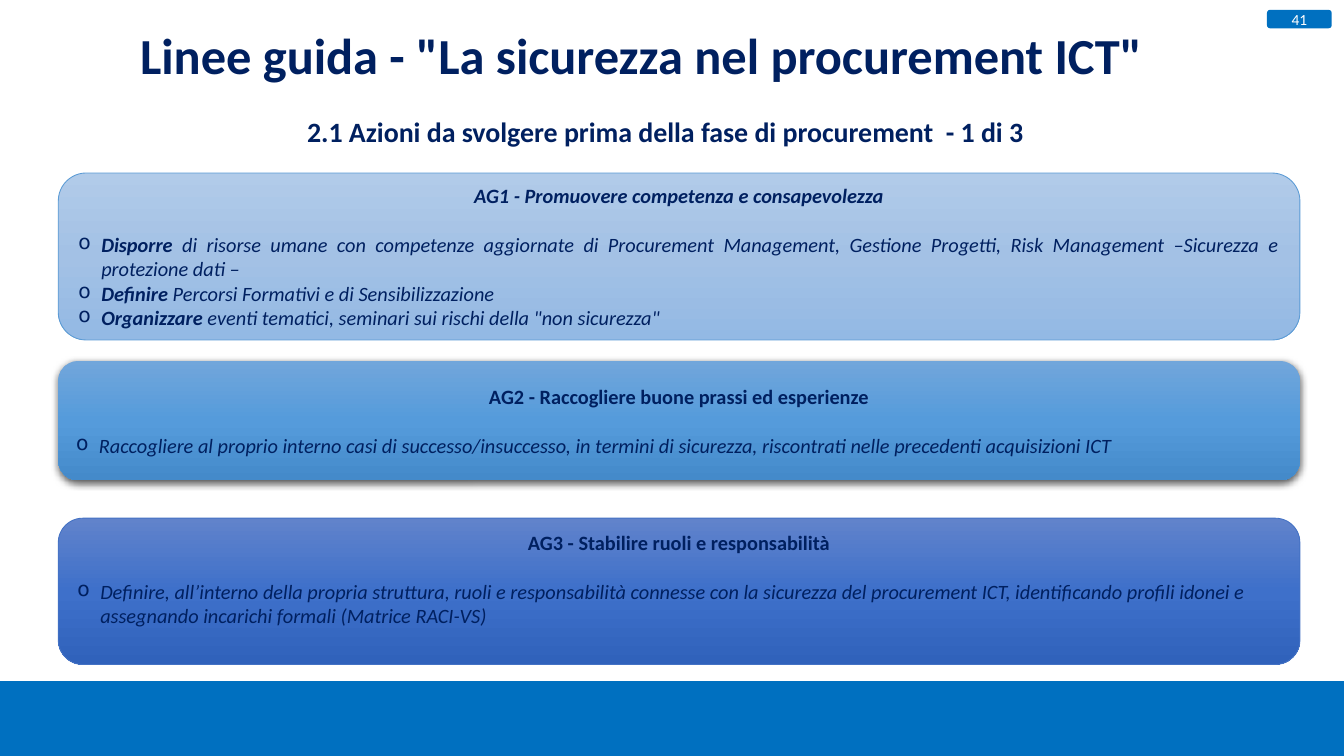
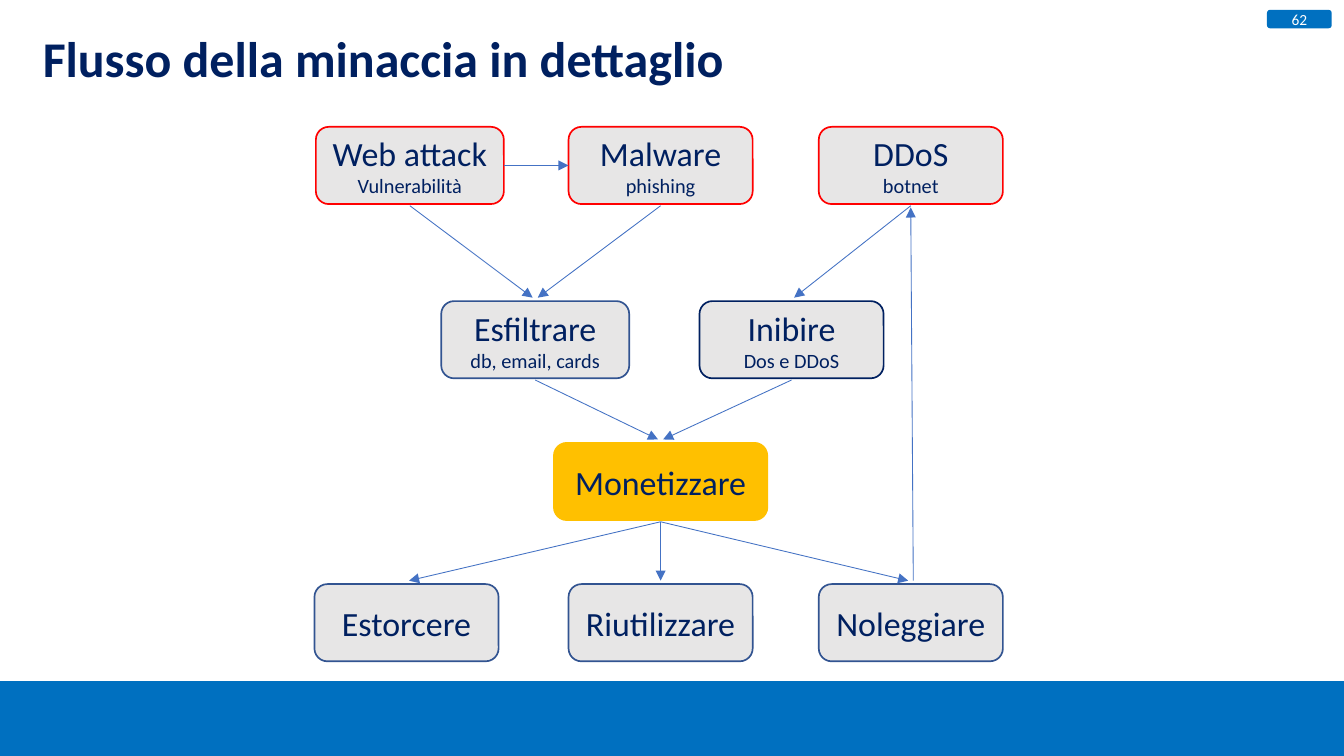
from dataclasses import dataclass
from typing import NamedTuple

from lxml.etree import SubElement
from pptx import Presentation
from pptx.dml.color import RGBColor
from pptx.enum.shapes import MSO_CONNECTOR, MSO_SHAPE
from pptx.enum.text import MSO_ANCHOR, PP_ALIGN
from pptx.oxml.ns import qn
from pptx.util import Pt

SLIDE_W, SLIDE_H = 793.44, 446.4
FONT = "Calibri"
NAVY, BLUE, WHITE = "002060", "0070C0", "FFFFFF"
GREY, RED, STEEL, GOLD, ARROW = "E7E6E6", "FF0000", "325491", "FFC000", "4472C4"
TITLE_Y, TITLE_W, TITLE_H = 9.4, 701.3, 49.7
CARD_X, CARD_W = 34.4, 733
BULLET_INDENT = 13.5
BLANK_LINE = 14.6
NODE_H = 45.6
ARROW_GAP, ARROW_SPREAD = 2, 1.5


class Item(NamedTuple):
    lead: str
    rest: str


@dataclass
class Card:
    top: float
    height: float
    heading: str
    items: list[Item]
    stops: tuple[str, str, str]
    line: str | None = None
    shadow: bool = False
    italic_heading: bool = False
    align: PP_ALIGN = PP_ALIGN.LEFT
    bottom_inset: float = 3.6


@dataclass
class Node:
    name: str
    cx: float
    top: float
    line: str = STEEL
    detail: str = ""
    width: float = 108.7
    fill: str = GREY

    @property
    def bottom(self) -> float:
        return self.top + NODE_H


CARDS = [
    Card(102.2, 98.6, "AG1 - Promuovere competenza e consapevolezza", [
        Item("Disporre", " di risorse umane con competenze aggiornate di Procurement "
             "Management, Gestione Progetti, Risk Management –Sicurezza e protezione dati –"),
        Item("Definire", " Percorsi Formativi e di Sensibilizzazione"),
        Item("Organizzare", " eventi tematici, seminari sui rischi della \"non sicurezza\""),
    ], ("B1CBE9", "A3C1E5", "93B9E4"), "5B9BD5", italic_heading=True, align=PP_ALIGN.JUSTIFY),
    Card(213.1, 70.6, "AG2 - Raccogliere buone prassi ed esperienze", [
        Item("", "Raccogliere al proprio interno casi di successo/insuccesso, in termini di "
             "sicurezza, riscontrati nelle precedenti acquisizioni ICT"),
    ], ("71A6DB", "559BDB", "448ACA"), shadow=True),
    Card(306, 86.4, "AG3 - Stabilire ruoli e responsabilità", [
        Item("", "Definire, all’interno della propria struttura, ruoli e responsabilità "
             "connesse con la sicurezza del procurement ICT, identificando profili idonei e "
             "assegnando incarichi formali (Matrice RACI-VS)"),
    ], ("6183CB", "3E70CA", "3062BB"), "4472C4", bottom_inset=3.6 + BLANK_LINE),
]

LEFT, MIDDLE, RIGHT = 241, 390, 537.7
ROWS = (74.9, 177.8, 261.5, 344.9)
NODES = [
    Node("Web attack", LEFT + 1, ROWS[0], RED, "Vulnerabilità", 111),
    Node("Malware", MIDDLE, ROWS[0], RED, "phishing"),
    Node("DDoS", RIGHT, ROWS[0], RED, "botnet"),
    Node("Esfiltrare", 316, ROWS[1], STEEL, "db, email, cards", 111),
    Node("Inibire", 467.3, ROWS[1], NAVY, "Dos e DDoS"),
    Node("Monetizzare", MIDDLE, ROWS[2], GOLD, width=126, fill=GOLD),
    Node("Estorcere", LEFT - 1, ROWS[3]),
    Node("Riutilizzare", MIDDLE, ROWS[3]),
    Node("Noleggiare", RIGHT, ROWS[3]),
]
LINKS = [
    ("Web attack", "Malware"),
    ("Web attack", "Esfiltrare"),
    ("Malware", "Esfiltrare"),
    ("DDoS", "Inibire"),
    ("Esfiltrare", "Monetizzare"),
    ("Inibire", "Monetizzare"),
    ("Monetizzare", "Estorcere"),
    ("Monetizzare", "Riutilizzare"),
    ("Monetizzare", "Noleggiare"),
    ("Noleggiare", "DDoS"),
]


def rgb(color: str) -> RGBColor:
    return RGBColor.from_string(color)


def format_run(r, size: float, color: str = NAVY, bold: bool = False, italic: bool = False) -> None:
    r.font.name, r.font.size = FONT, Pt(size)
    r.font.bold, r.font.italic = bold, italic
    r.font.color.rgb = rgb(color)


def add_box(s, shape, x: float, y: float, w: float, h: float,
            fill: str | None = None, line: str | None = None, line_width: float = 1):
    sp = s.shapes.add_shape(shape, Pt(x), Pt(y), Pt(w), Pt(h))
    sp.shadow.inherit = False
    if fill:
        sp.fill.solid()
        sp.fill.fore_color.rgb = rgb(fill)
    if line:
        sp.line.color.rgb = rgb(line)
        sp.line.width = Pt(line_width)
    else:
        sp.line.fill.background()
    sp.text_frame.word_wrap = True
    sp.text_frame.vertical_anchor = MSO_ANCHOR.MIDDLE
    return sp


def add_line_of_text(tf, text: str, size: float, align: PP_ALIGN = PP_ALIGN.CENTER,
                     color: str = NAVY, bold: bool = False, italic: bool = False):
    """Fill the first paragraph if it is free, otherwise add one."""
    p = tf.add_paragraph() if tf.text else tf.paragraphs[0]
    p.text = text
    p.alignment = align
    format_run(p.runs[0], size, color, bold, italic)
    return p


def add_text(s, text: str, x: float, y: float, w: float, h: float, size: float,
             align: PP_ALIGN = PP_ALIGN.CENTER):
    tf = s.shapes.add_textbox(Pt(x), Pt(y), Pt(w), Pt(h)).text_frame
    tf.word_wrap = True
    return tf, add_line_of_text(tf, text, size, align, bold=True)


def add_frame(prs, number: str, title: str, title_x: float, title_y: float,
              size: float, align: PP_ALIGN):
    """Add a slide with the footer band, number badge and title."""
    s = prs.slides.add_slide(prs.slide_layouts[6])
    add_box(s, MSO_SHAPE.RECTANGLE, 0, 402.2, SLIDE_W, SLIDE_H - 402.2, BLUE)
    badge = add_box(s, MSO_SHAPE.ROUNDED_RECTANGLE, 748, 5.8, 38.2, 10.9, BLUE)
    badge.text_frame.margin_top = badge.text_frame.margin_bottom = Pt(0)
    add_line_of_text(badge.text_frame, number, 9.1, color=WHITE)
    tf, p = add_text(s, title, title_x, title_y, TITLE_W, TITLE_H, size, align)
    tf.vertical_anchor = MSO_ANCHOR.MIDDLE
    tf.margin_left = tf.margin_right = Pt(5.9)
    p.line_spacing = 0.9
    return s


def set_gradient(sp, colors: tuple[str, ...]) -> None:
    """Spread the colours evenly from top to bottom."""
    sp.fill.gradient()
    sp.fill.gradient_angle = 270
    stops = sp.element.spPr.find(qn("a:gradFill")).find(qn("a:gsLst"))
    for stop in list(stops):
        stops.remove(stop)
    for i, color in enumerate(colors):
        stop = SubElement(stops, qn("a:gs"), pos=str(100000 * i // (len(colors) - 1)))
        SubElement(stop, qn("a:srgbClr"), val=color)


def add_shadow(sp) -> None:
    effects = sp.element.spPr.find(qn("a:effectLst"))
    shadow = SubElement(effects, qn("a:outerShdw"), blurRad=str(Pt(4.5)), dist=str(Pt(1.5)),
                        dir="5400000", algn="ctr", rotWithShape="0")
    color = SubElement(shadow, qn("a:srgbClr"), val="000000")
    SubElement(color, qn("a:alpha"), val="63000")


def add_bullet(tf, item: Item, align: PP_ALIGN) -> None:
    p = tf.add_paragraph()
    pPr = p._p.get_or_add_pPr()
    pPr.set("marL", str(Pt(BULLET_INDENT)))
    pPr.set("indent", str(Pt(-BULLET_INDENT)))
    SubElement(pPr, qn("a:buChar"), char="o")
    p.alignment = align
    for text, bold in ((item.lead, True), (item.rest, False)):
        if text:
            r = p.add_run()
            r.text = text
            format_run(r, 12, bold=bold, italic=True)


def add_card(s, card: Card) -> None:
    sp = add_box(s, MSO_SHAPE.ROUNDED_RECTANGLE, CARD_X, card.top, CARD_W, card.height,
                 line=card.line, line_width=0.5)
    set_gradient(sp, card.stops)
    if card.shadow:
        add_shadow(sp)
    tf = sp.text_frame
    tf.margin_bottom = Pt(card.bottom_inset)
    p = add_line_of_text(tf, card.heading, 12, bold=True, italic=card.italic_heading)
    p.space_after = Pt(BLANK_LINE)
    for item in card.items:
        add_bullet(tf, item, card.align)


def add_node(s, node: Node) -> None:
    sp = add_box(s, MSO_SHAPE.ROUNDED_RECTANGLE, node.cx - node.width / 2, node.top,
                 node.width, NODE_H, node.fill, node.line)
    add_line_of_text(sp.text_frame, node.name, 20)
    if node.detail:
        add_line_of_text(sp.text_frame, node.detail, 12)


def add_arrow(s, x1: float, y1: float, x2: float, y2: float) -> None:
    cxn = s.shapes.add_connector(MSO_CONNECTOR.STRAIGHT, Pt(x1), Pt(y1), Pt(x2), Pt(y2))
    cxn.line.color.rgb = rgb(ARROW)
    cxn.line.width = Pt(0.5)
    spPr = cxn.element.spPr
    SubElement(spPr.find(qn("a:ln")), qn("a:tailEnd"), type="triangle")
    SubElement(spPr, qn("a:effectLst"))


def link_nodes(s, src: Node, dst: Node) -> None:
    """Join facing edges; slanted arrows end slightly towards their source."""
    if src.top == dst.top:
        y = src.top + NODE_H / 2
        add_arrow(s, src.cx + src.width / 2, y, dst.cx - dst.width / 2, y)
    elif src.top < dst.top:
        side = (src.cx > dst.cx) - (src.cx < dst.cx)
        add_arrow(s, src.cx, src.bottom + ARROW_GAP / 2,
                  dst.cx + side * ARROW_SPREAD, dst.top - ARROW_GAP)
    else:
        add_arrow(s, src.cx + ARROW_SPREAD, src.top - ARROW_GAP, dst.cx, dst.bottom + ARROW_GAP)


def build_guidelines(prs) -> None:
    s = add_frame(prs, "41", "Linee guida - \"La sicurezza nel procurement ICT\"",
                  28, TITLE_Y, 29.8, PP_ALIGN.CENTER)
    add_text(s, "2.1 Azioni da svolgere prima della fase di procurement  - 1 di 3",
             24.5, 64.1, 736.6, 27.4, 16.5)
    for card in CARDS:
        add_card(s, card)


def build_threat_flow(prs) -> None:
    s = add_frame(prs, "62", "Flusso della minaccia in dettaglio",
                  19.4, TITLE_Y + 2, 29.5, PP_ALIGN.LEFT)
    nodes = {node.name: node for node in NODES}
    for node in NODES:
        add_node(s, node)
    for src, dst in LINKS:
        link_nodes(s, nodes[src], nodes[dst])


def main() -> None:
    prs = Presentation()
    prs.slide_width, prs.slide_height = Pt(SLIDE_W), Pt(SLIDE_H)
    build_guidelines(prs)
    build_threat_flow(prs)
    prs.save("out.pptx")


if __name__ == "__main__":
    main()
